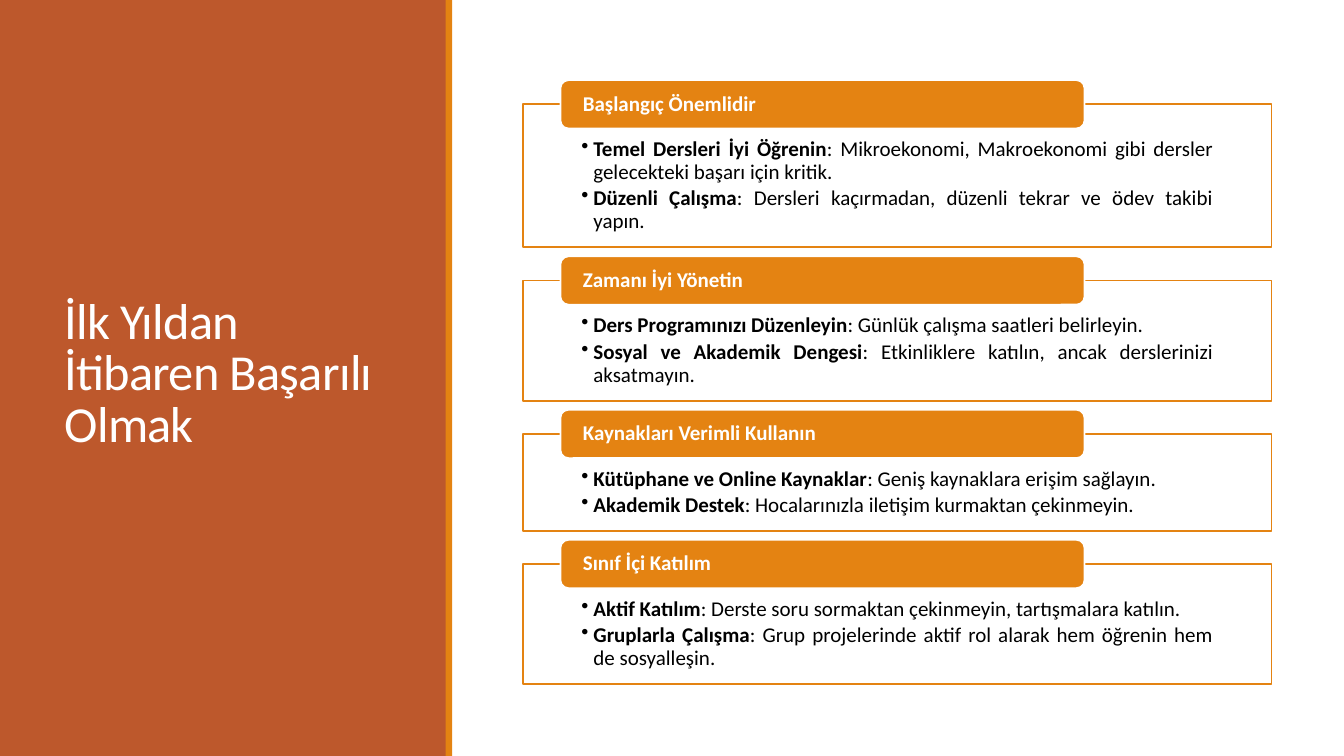
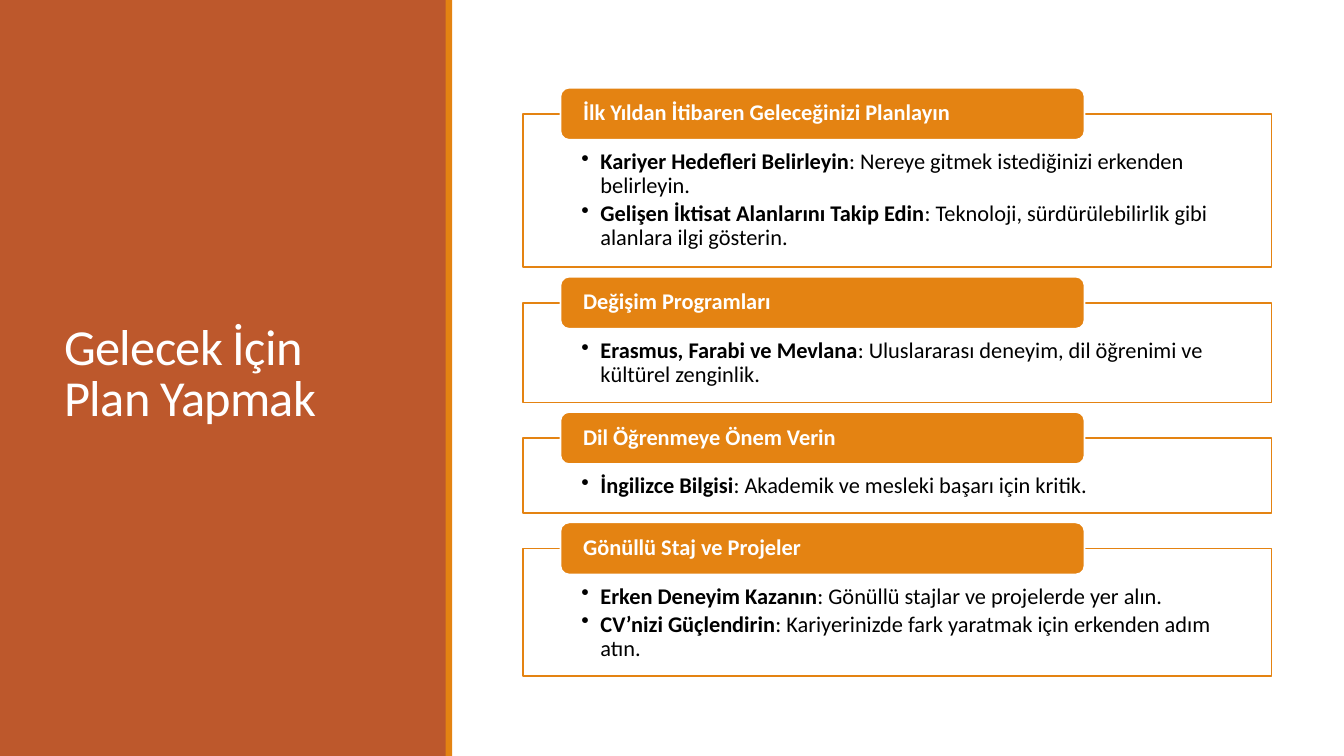
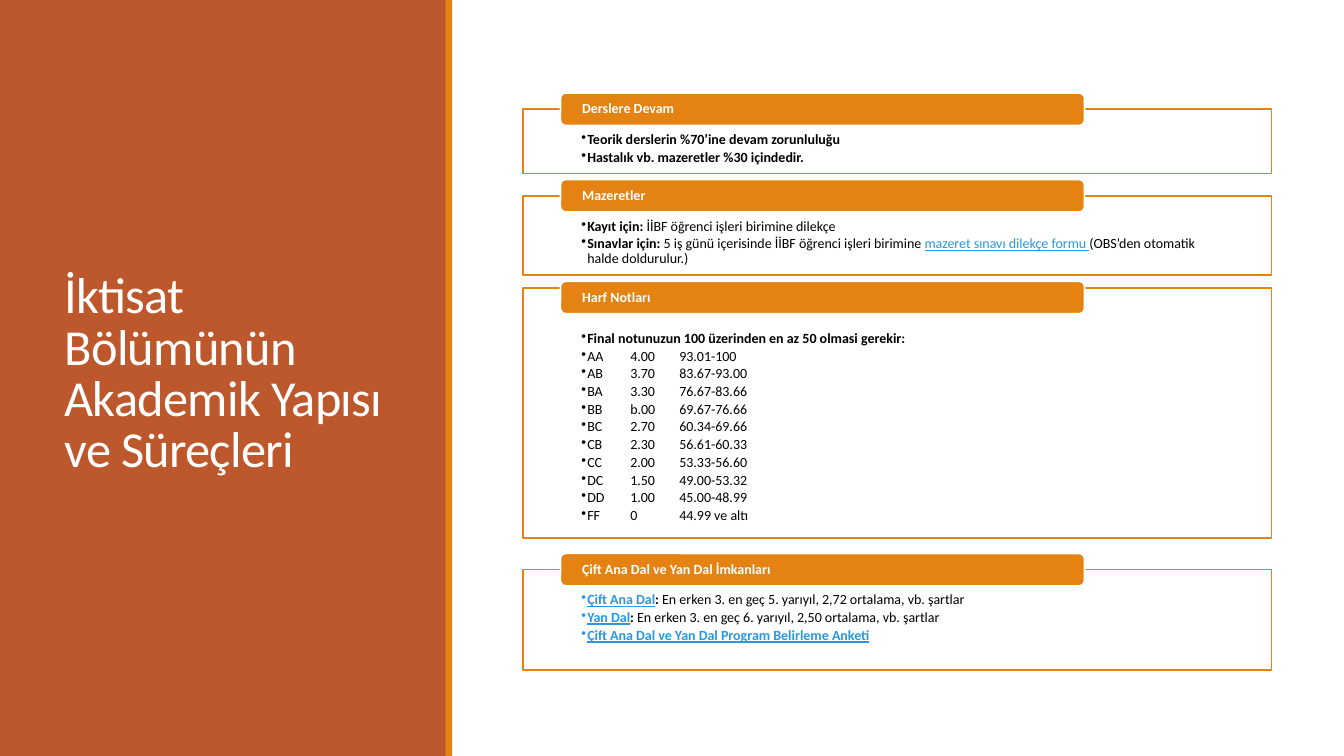
from typing import NamedTuple

from lxml.etree import SubElement
from pptx import Presentation
from pptx.dml.color import RGBColor
from pptx.enum.shapes import MSO_SHAPE as Preset
from pptx.enum.text import MSO_ANCHOR as Anchor, MSO_AUTO_SIZE as AutoSize, PP_ALIGN as Align
from pptx.oxml.ns import qn
from pptx.util import Emu, Inches, Pt

COLORS = {
    "rust": "BD582C",
    "orange": "E48312",
    "white": "FFFFFF",
    "ink": "000000",
    "link": "2998E3",
}
FONT = "Calibri"


class Section(NamedTuple):
    """A heading with its points; height, gap and lift are percent of the slide's height."""
    heading: str
    height: float
    points: list
    gap: float = None
    lift: float = None
    lead: float = 0


class Scale(NamedTuple):
    """Sizes of one slide's stack: percent of the slide's height, points and inches."""
    top: float
    tab: float
    gap: float
    size: int
    indent: float
    inset_top: float
    inset_bottom: float
    align: Align = Align.LEFT


class Deck:
    """Holds the shared style and the slide being built; lengths are percent of the slide."""

    def __init__(self):
        self.file = Presentation()
        self.file.slide_width, self.file.slide_height = Inches(13.333), Inches(7.5)
        self.slide = None

    def place(self, left, top, width, height):
        """Turn percentages of the slide into lengths."""
        across, down = self.file.slide_width / 100, self.file.slide_height / 100
        return [Emu(round(share * unit)) for share, unit in
                zip((left, top, width, height), (across, down, across, down))]

    def color(self, name):
        """Look up a named colour."""
        return RGBColor.from_string(COLORS[name])

    def block(self, preset, box, fill, line=None):
        """Draw a filled shape, with an outline if a line colour is named."""
        shape = self.slide.shapes.add_shape(preset, *self.place(*box))
        shape.shadow.inherit = False
        shape.fill.solid()
        shape.fill.fore_color.rgb = self.color(fill)
        if line:
            shape.line.color.rgb = self.color(line)
            shape.line.width = Pt(1.25)
        else:
            shape.line.fill.background()
        return shape

    def frame(self, shape, anchor, insets):
        """Set the anchor and the insets in inches, and give back the text frame."""
        text = shape.text_frame
        text.word_wrap = True
        text.auto_size = AutoSize.NONE
        text.vertical_anchor = anchor
        text.margin_left, text.margin_top, text.margin_right, text.margin_bottom = map(Inches, insets)
        return text

    def style(self, run, size, color, bold=False, underline=None):
        """Format one run."""
        run.font.name = FONT
        run.font.size = Pt(size)
        run.font.bold = bold
        run.font.underline = underline
        run.font.color.rgb = self.color(color)

    def start(self, title):
        """Add a slide with the side panel, its stripe and the title."""
        self.slide = self.file.slides.add_slide(self.file.slide_layouts[5])
        self.block(Preset.RECTANGLE, (0, 0, 33.2, 100), "rust")
        heading = self.slide.shapes.title
        heading.element.getparent().append(heading.element)
        heading.left, heading.top, heading.width, heading.height = self.place(4.05, 7.6, 25.3, 84.1)
        text = self.frame(heading, Anchor.MIDDLE, (0.1, 0.05, 0.1, 0.05))
        text.text = title
        paragraph = text.paragraphs[0]
        paragraph.alignment = Align.LEFT
        paragraph.line_spacing = 0.85
        self.style(paragraph.runs[0], 36, "white")
        paragraph.runs[0].font._element.set("spc", "-50")
        self.block(Preset.RECTANGLE, (33.15, 0, 0.5, 100), "orange")

    def point(self, paragraph, parts, scale):
        """Write a bulleted paragraph from (text, marks) parts: b is bold, u is link style."""
        paragraph.alignment = scale.align
        paragraph.line_spacing = 0.9
        paragraph.space_after = Pt(round(0.18 * scale.size, 1))
        indent = Inches(scale.indent)
        properties = paragraph._p.get_or_add_pPr()
        for key, value in (("marL", indent), ("indent", -indent), ("defTabSz", 444500)):
            properties.set(key, str(value))
        SubElement(properties, qn("a:buChar"), char="•")
        for words, marks in parts:
            run = paragraph.add_run()
            run.text = words
            linked = "u" in marks
            self.style(run, scale.size, "link" if linked else "ink", "b" in marks, linked or None)

    def body(self, section, top, scale):
        """Draw the outlined box that holds a section's points."""
        box = self.block(Preset.RECTANGLE, (38.9, top, 55.7, section.height), "white", "orange")
        fill = box.element.spPr.find(qn("a:solidFill")).find(qn("a:srgbClr"))
        SubElement(fill, qn("a:alpha"), val="90000")
        insets = (0.58, scale.inset_top + section.lead, 0.58, scale.inset_bottom)
        text = self.frame(box, Anchor.TOP, insets)
        for index, parts in enumerate(section.points):
            paragraph = text.add_paragraph() if index else text.paragraphs[0]
            self.point(paragraph, parts, scale)

    def tab(self, heading, top, scale):
        """Draw the rounded heading over the edge of a box."""
        label = self.block(Preset.ROUNDED_RECTANGLE, (41.7, top, 39, scale.tab), "orange", "white")
        text = self.frame(label, Anchor.MIDDLE, (0.2, 0, 0.2, 0))
        text.text = heading
        paragraph = text.paragraphs[0]
        paragraph.alignment = Align.LEFT
        paragraph.line_spacing = 0.9
        self.style(paragraph.runs[0], scale.size, "white", True)

    def stack(self, sections, scale):
        """Lay the sections out from top to bottom."""
        top = scale.top
        for section in sections:
            lift = scale.tab / 2 if section.lift is None else section.lift
            self.body(section, top + lift, scale)
            self.tab(section.heading, top, scale)
            gap = scale.gap if section.gap is None else section.gap
            top += lift + section.height + gap


def pair(term, detail):
    """Give a bold term followed by a plain explanation."""
    return [(term, "b"), (detail, "")]


GRADES = [
    ("AA", "4.00", "93.01-100"),
    ("AB", "3.70", "83.67-93.00"),
    ("BA", "3.30", "76.67-83.66"),
    ("BB", "b.00", "69.67-76.66"),
    ("BC", "2.70", "60.34-69.66"),
    ("CB", "2.30", "56.61-60.33"),
    ("CC", "2.00", "53.33-56.60"),
    ("DC", "1.50", "49.00-53.32"),
    ("DD", "1.00", "45.00-48.99"),
    ("FF", "0", "44.99 ve altı"),
]

SUCCESS = [
    Section("Başlangıç Önemlidir", 18.9, [
        pair("Temel Dersleri İyi Öğrenin",
             ": Mikroekonomi, Makroekonomi gibi dersler gelecekteki başarı için kritik."),
        pair("Düzenli Çalışma", ": Dersleri kaçırmadan, düzenli tekrar ve ödev takibi yapın."),
    ]),
    Section("Zamanı İyi Yönetin", 15.9, [
        pair("Ders Programınızı Düzenleyin", ": Günlük çalışma saatleri belirleyin."),
        pair("Sosyal ve Akademik Dengesi", ": Etkinliklere katılın, ancak derslerinizi aksatmayın."),
    ]),
    Section("Kaynakları Verimli Kullanın", 12.8, [
        pair("Kütüphane ve Online Kaynaklar", ": Geniş kaynaklara erişim sağlayın."),
        pair("Akademik Destek", ": Hocalarınızla iletişim kurmaktan çekinmeyin."),
    ]),
    Section("Sınıf İçi Katılım", 15.9, [
        pair("Aktif Katılım", ": Derste soru sormaktan çekinmeyin, tartışmalara katılın."),
        pair("Gruplarla Çalışma",
             ": Grup projelerinde aktif rol alarak hem öğrenin hem de sosyalleşin."),
    ]),
]

FUTURE = [
    Section("İlk Yıldan İtibaren Geleceğinizi Planlayın", 20.3, [
        pair("Kariyer Hedefleri Belirleyin", ": Nereye gitmek istediğinizi erkenden belirleyin."),
        pair("Gelişen İktisat Alanlarını Takip Edin",
             ": Teknoloji, sürdürülebilirlik gibi alanlara ilgi gösterin."),
    ]),
    Section("Değişim Programları", 13.2, [
        pair("Erasmus, Farabi ve Mevlana",
             ": Uluslararası deneyim, dil öğrenimi ve kültürel zenginlik."),
    ]),
    Section("Dil Öğrenmeye Önem Verin", 9.9, [
        pair("İngilizce Bilgisi", ": Akademik ve mesleki başarı için kritik."),
    ]),
    Section("Gönüllü Staj ve Projeler", 16.9, [
        pair("Erken Deneyim Kazanın", ": Gönüllü stajlar ve projelerde yer alın."),
        pair("CV’nizi Güçlendirin", ": Kariyerinizde fark yaratmak için erkenden adım atın."),
    ]),
]

PROCESSES = [
    Section("Derslere Devam", 8.5, [
        [("Teorik derslerin %70’ine devam zorunluluğu", "b")],
        [("Hastalık vb. mazeretler %30 içindedir.", "b")],
    ]),
    Section("Mazeretler", 10.5, [
        pair("Kayıt için: ", "İİBF öğrenci işleri birimine dilekçe"),
        pair("Sınavlar için: ", "5 iş günü içerisinde İİBF öğrenci işleri birimine ")
        + [("mazeret sınavı dilekçe formu ", "u"), ("(OBS’den otomatik halde doldurulur.)", "")],
    ]),
    Section("Harf Notları", 33.1, [
        [("Final notunuzun 100 üzerinden en az 50 olmasi gerekir:", "b")],
        *([("\t".join(grade), "")] for grade in GRADES),
    ], gap=2, lift=0.9, lead=0.2),
    Section("Çift Ana Dal ve Yan Dal İmkanları", 13.3, [
        [("Çift Ana Dal", "bu")]
        + pair(": ", "En erken 3. en geç 5. yarıyıl, 2,72 ortalama, vb. şartlar"),
        [("Yan Dal", "bu")]
        + pair(": ", "En erken 3. en geç 6. yarıyıl, 2,50 ortalama, vb. şartlar"),
        [("Çift Ana Dal ve Yan Dal Program Belirleme Anketi", "bu")],
    ]),
]

SLIDES = [
    ("İlk Yıldan İtibaren Başarılı Olmak", SUCCESS,
     Scale(10.6, 6.4, 1.2, 15, 0.12, 0.34, 0.12, Align.JUSTIFY)),
    ("Gelecek İçin Plan Yapmak", FUTURE,
     Scale(11.6, 6.9, 1.25, 16, 0.19, 0.36, 0.12)),
    ("İktisat Bölümünün Akademik Yapısı ve Süreçleri", PROCESSES,
     Scale(12.3, 4.3, 0.8, 10, 0.06, 0.23, 0.08)),
]


def main():
    """Build the slides and save the file."""
    deck = Deck()
    for title, sections, scale in SLIDES:
        deck.start(title)
        deck.stack(sections, scale)
    deck.file.save("out.pptx")


if __name__ == "__main__":
    main()
